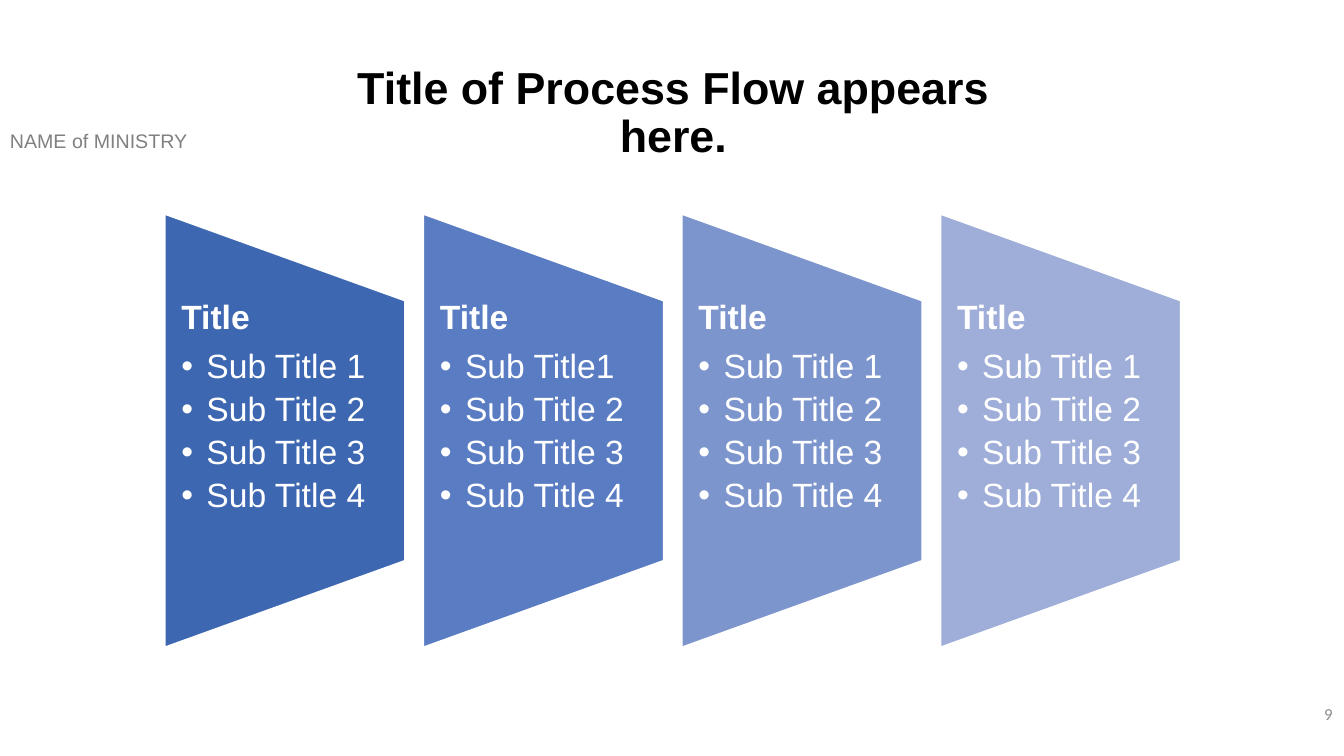
"""Build the four-stage process flow slide."""
from dataclasses import dataclass

from lxml.etree import SubElement
from pptx import Presentation
from pptx.dml.color import RGBColor
from pptx.enum.shapes import MSO_SHAPE as Preset
from pptx.enum.text import MSO_ANCHOR as Anchor, MSO_AUTO_SIZE as AutoSize, PP_ALIGN as Align
from pptx.oxml.ns import qn
from pptx.util import Pt


@dataclass(frozen=True)
class Theme:
    font: str = "Arial"
    number_font: str = "Calibri"
    title_size: float = 32
    stage_size: float = 24
    label_size: float = 14
    number_size: float = 12
    dark: str = "000000"
    light: str = "FFFFFF"
    label_grey: str = "808080"
    number_grey: str = "8C8C8C"


@dataclass(frozen=True)
class Box:
    left: float
    top: float
    width: float
    height: float


@dataclass(frozen=True)
class Stage:
    fill: str
    items: tuple[str, ...]
    heading: str = "Title"


THEME = Theme()
SUBTITLES = tuple(f"Sub Title {number}" for number in range(1, 5))
STAGES = (
    Stage("3E67B2", SUBTITLES),
    Stage("5A7CC3", ("Sub Title1", *SUBTITLES[1:])),
    Stage("7D95CD", SUBTITLES),
    Stage("9FAED8", SUBTITLES),
)
STAGE_LEFT, STAGE_PITCH, STAGE_WIDTH = 117.5, 184.7, 172
STAGE_MIDDLE, STAGE_HEIGHT, LIST_HEIGHT = 307.6, 310, 186.4
COMPARISON_LAYOUT = 4


def place(shape, box: Box) -> None:
    shape.left, shape.top = Pt(box.left), Pt(box.top)
    shape.width, shape.height = Pt(box.width), Pt(box.height)


def style(paragraph, size: float, color: str, bold: bool = False, font: str = THEME.font) -> None:
    paragraph.font.name, paragraph.font.size, paragraph.font.bold = font, Pt(size), bold
    paragraph.font.color.rgb = RGBColor.from_string(color)


def set_bullet(paragraph, character: str = "") -> None:
    properties = paragraph._p.get_or_add_pPr()
    indent = Pt(18) if character else 0
    properties.set("marL", str(indent))
    properties.set("indent", str(-indent))
    if character:
        SubElement(properties, qn("a:buChar"), char=character)
    else:
        SubElement(properties, qn("a:buNone"))


def prepare_frame(shape, anchor: Anchor = Anchor.TOP):
    frame = shape.text_frame
    frame.word_wrap, frame.auto_size, frame.vertical_anchor = True, AutoSize.NONE, anchor
    return frame


def add_label(slide, text: str, box: Box, size: float, color: str, font: str = THEME.font,
              align: Align = Align.LEFT, anchor: Anchor = Anchor.TOP) -> None:
    shape = slide.shapes.add_textbox(0, 0, 0, 0)
    place(shape, box)
    paragraph = prepare_frame(shape, anchor).paragraphs[0]
    paragraph.text, paragraph.alignment = text, align
    style(paragraph, size, color, font=font)


def add_title(slide, text: str) -> None:
    title = slide.shapes.title
    place(title, Box(236.2, 43.2, 489.6, 77))
    paragraph = prepare_frame(title).paragraphs[0]
    paragraph.text, paragraph.alignment, paragraph.line_spacing = text, Align.CENTER, 0.9
    style(paragraph, THEME.title_size, THEME.dark, bold=True)


def add_panel(slide, stage: Stage, left: float) -> None:
    panel = slide.shapes.add_shape(Preset.FLOWCHART_MANUAL_OPERATION, 0, 0, 0, 0)
    place(panel, Box(left + (STAGE_WIDTH - STAGE_HEIGHT) / 2, STAGE_MIDDLE - STAGE_WIDTH / 2,
                     STAGE_HEIGHT, STAGE_WIDTH))
    panel.rotation = 270
    panel.shadow.inherit = False
    panel.fill.solid()
    panel.fill.fore_color.rgb = RGBColor.from_string(stage.fill)
    panel.line.color.rgb = RGBColor.from_string(THEME.light)
    panel.line.width = Pt(1.5)


def fill_list(slide, body, stage: Stage, left: float) -> None:
    slide.shapes.element.append(body.element)
    place(body, Box(left, STAGE_MIDDLE - LIST_HEIGHT / 2, STAGE_WIDTH, LIST_HEIGHT))
    frame = prepare_frame(body)
    frame.margin_left = frame.margin_right = Pt(12)
    frame.margin_top = frame.margin_bottom = 0
    frame.text = "\n".join((stage.heading, *stage.items))
    for index, paragraph in enumerate(frame.paragraphs):
        is_heading = index == 0
        set_bullet(paragraph, "" if is_heading else "•")
        paragraph.alignment, paragraph.line_spacing = Align.LEFT, 0.9
        paragraph.space_before, paragraph.space_after = Pt(0), Pt(9.5 if is_heading else 4.7)
        style(paragraph, THEME.stage_size, THEME.light, bold=is_heading)


def main() -> None:
    presentation = Presentation()
    presentation.slide_width, presentation.slide_height = Pt(960), Pt(540)
    slide = presentation.slides.add_slide(presentation.slide_layouts[COMPARISON_LAYOUT])
    add_title(slide, "Title of Process Flow appears here.")
    add_label(slide, "NAME of MINISTRY", Box(0, 88.6, 208.8, 24.5), THEME.label_size, THEME.label_grey)
    add_label(slide, "9", Box(743, 495.4, 216, 28.8), THEME.number_size, THEME.number_grey,
              THEME.number_font, Align.RIGHT, Anchor.MIDDLE)
    bodies = list(slide.placeholders)[1:]
    for index, (stage, body) in enumerate(zip(STAGES, bodies)):
        left = STAGE_LEFT + index * STAGE_PITCH
        add_panel(slide, stage, left)
        fill_list(slide, body, stage, left)
    presentation.save("out.pptx")


if __name__ == "__main__":
    main()
